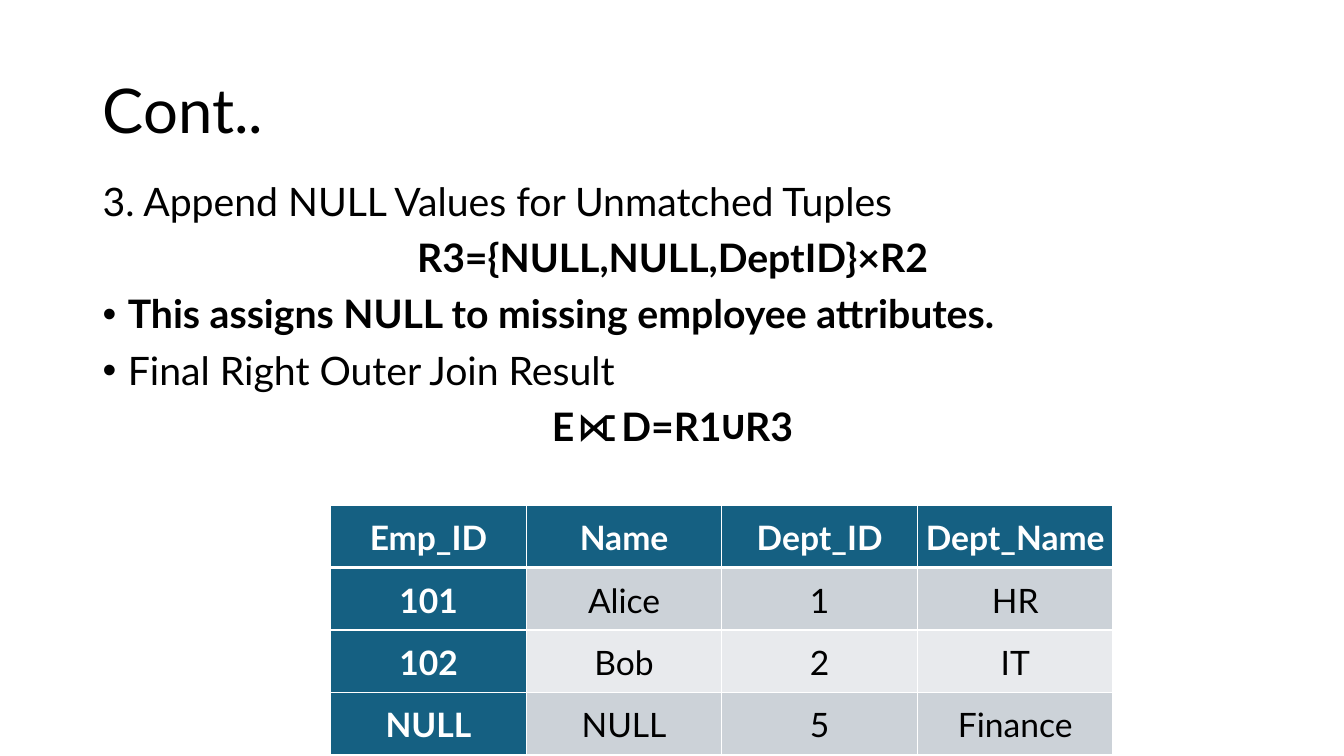
"""Build the slide on the final step of a right outer join."""
from dataclasses import dataclass

import pptx
import pptx.dml.color
import pptx.enum.text
import pptx.oxml
import pptx.oxml.ns
import pptx.slide
import pptx.table
import pptx.text.text
import pptx.util

PX = 9144
ALIGN = pptx.enum.text.PP_ALIGN
ANCHOR = pptx.enum.text.MSO_ANCHOR


@dataclass(frozen=True)
class Theme:
    font: str = "Lato"
    ink: str = "000000"
    paper: str = "FFFFFF"
    accent: str = "156082"
    bands: tuple[str, str] = ("CCD2D8", "E8EAED")
    title_size: int = 44
    body_size: int = 28
    table_size: int = 24
    rule: int = 1
    header_rule: int = 3


@dataclass(frozen=True)
class Box:
    left: int
    top: int
    width: int
    height: int

    def emu(self) -> tuple[int, int, int, int]:
        return self.left * PX, self.top * PX, self.width * PX, self.height * PX


@dataclass(frozen=True)
class Line:
    text: str
    bold: bool = False
    centered: bool = False
    bullet: bool = False


THEME = Theme()
TITLE_BOX = Box(92, 40, 1150, 145)
BODY_BOX = Box(92, 176, 1150, 574)
TABLE_BOX = Box(328, 501, 776, 248)
BULLET_INDENT = 25
CELL_MARGIN = 1

LINES = [
    Line("3. Append NULL Values for Unmatched Tuples"),
    Line("R3={NULL,NULL,DeptID}×R2", bold=True, centered=True),
    Line("This assigns NULL to missing employee attributes.", bold=True, bullet=True),
    Line("Final Right Outer Join Result", bullet=True),
    Line("E⟖D=R1∪R3", bold=True, centered=True),
]
JOIN_ROWS = [
    ("Emp_ID", "Name", "Dept_ID", "Dept_Name"),
    ("101", "Alice", "1", "HR"),
    ("102", "Bob", "2", "IT"),
    ("NULL", "NULL", "5", "Finance"),
]


def rgb(color: str) -> pptx.dml.color.RGBColor:
    return pptx.dml.color.RGBColor.from_string(color)


def add_run(paragraph: pptx.text.text._Paragraph, text: str, size: int,
            color: str, bold: bool = False) -> None:
    run = paragraph.add_run()
    run.text = text
    run.font.name = THEME.font
    run.font.size = pptx.util.Pt(size)
    run.font.bold = bold
    run.font.color.rgb = rgb(color)


def add_bullet(paragraph: pptx.text.text._Paragraph) -> None:
    properties = paragraph._p.get_or_add_pPr()
    properties.set("marL", str(BULLET_INDENT * PX))
    properties.set("indent", str(-BULLET_INDENT * PX))
    namespace = pptx.oxml.ns.nsdecls("a")
    properties.append(pptx.oxml.parse_xml(f'<a:buFont {namespace} typeface="Arial"/>'))
    properties.append(pptx.oxml.parse_xml(f'<a:buChar {namespace} char="•"/>'))


def draw_title(slide: pptx.slide.Slide, text: str) -> None:
    title = slide.shapes.title
    title.left, title.top, title.width, title.height = TITLE_BOX.emu()
    frame = title.text_frame
    frame.auto_size = pptx.enum.text.MSO_AUTO_SIZE.NONE
    frame.vertical_anchor = ANCHOR.MIDDLE
    paragraph = frame.paragraphs[0]
    paragraph.alignment = ALIGN.LEFT
    paragraph.line_spacing = 0.9
    add_run(paragraph, text, THEME.title_size, THEME.ink)


def draw_body(slide: pptx.slide.Slide, lines: list[Line]) -> None:
    frame = slide.shapes.add_textbox(*BODY_BOX.emu()).text_frame
    frame.word_wrap = True
    for index, line in enumerate(lines):
        paragraph = frame.add_paragraph() if index else frame.paragraphs[0]
        paragraph.alignment = ALIGN.CENTER if line.centered else ALIGN.LEFT
        paragraph.line_spacing = 0.9
        paragraph.space_before = pptx.util.Pt(10)
        if line.bullet:
            add_bullet(paragraph)
        add_run(paragraph, line.text, THEME.body_size, THEME.ink, line.bold)


def add_borders(cell: pptx.table._Cell, top: int, bottom: int) -> None:
    widths = {"lnL": THEME.rule, "lnR": THEME.rule, "lnT": top, "lnB": bottom}
    properties = cell._tc.get_or_add_tcPr()
    for side, width in widths.items():
        properties.append(pptx.oxml.parse_xml(
            f'<a:{side} {pptx.oxml.ns.nsdecls("a")} w="{pptx.util.Pt(width)}">'
            f'<a:solidFill><a:srgbClr val="{THEME.paper}"/></a:solidFill></a:{side}>'))


def draw_cell(cell: pptx.table._Cell, text: str, row: int, column: int) -> None:
    heading = row == 0 or column == 0
    add_borders(cell,
                top=THEME.header_rule if row == 1 else THEME.rule,
                bottom=THEME.header_rule if row == 0 else THEME.rule)
    cell.fill.solid()
    cell.fill.fore_color.rgb = rgb(THEME.accent if heading else THEME.bands[(row - 1) % 2])
    cell.margin_left = cell.margin_right = CELL_MARGIN * PX
    cell.margin_top = cell.margin_bottom = CELL_MARGIN * PX
    cell.vertical_anchor = ANCHOR.MIDDLE
    paragraph = cell.text_frame.paragraphs[0]
    paragraph.alignment = ALIGN.CENTER
    paragraph.line_spacing = 1.07
    paragraph.space_after = pptx.util.Pt(8)
    add_run(paragraph, text, THEME.table_size,
            THEME.paper if heading else THEME.ink, heading)


def draw_table(slide: pptx.slide.Slide, rows: list[tuple[str, ...]]) -> None:
    table = slide.shapes.add_table(len(rows), len(rows[0]), *TABLE_BOX.emu()).table
    table.first_col = True
    for row, texts in enumerate(rows):
        for column, text in enumerate(texts):
            draw_cell(table.cell(row, column), text, row, column)


def main() -> None:
    presentation = pptx.Presentation()
    presentation.slide_width = 1333 * PX
    presentation.slide_height = 750 * PX
    slide = presentation.slides.add_slide(presentation.slide_layouts[5])
    slide.background.fill.solid()
    slide.background.fill.fore_color.rgb = rgb(THEME.paper)
    draw_title(slide, "Cont..")
    draw_body(slide, LINES)
    draw_table(slide, JOIN_ROWS)
    presentation.save("out.pptx")


if __name__ == "__main__":
    main()
